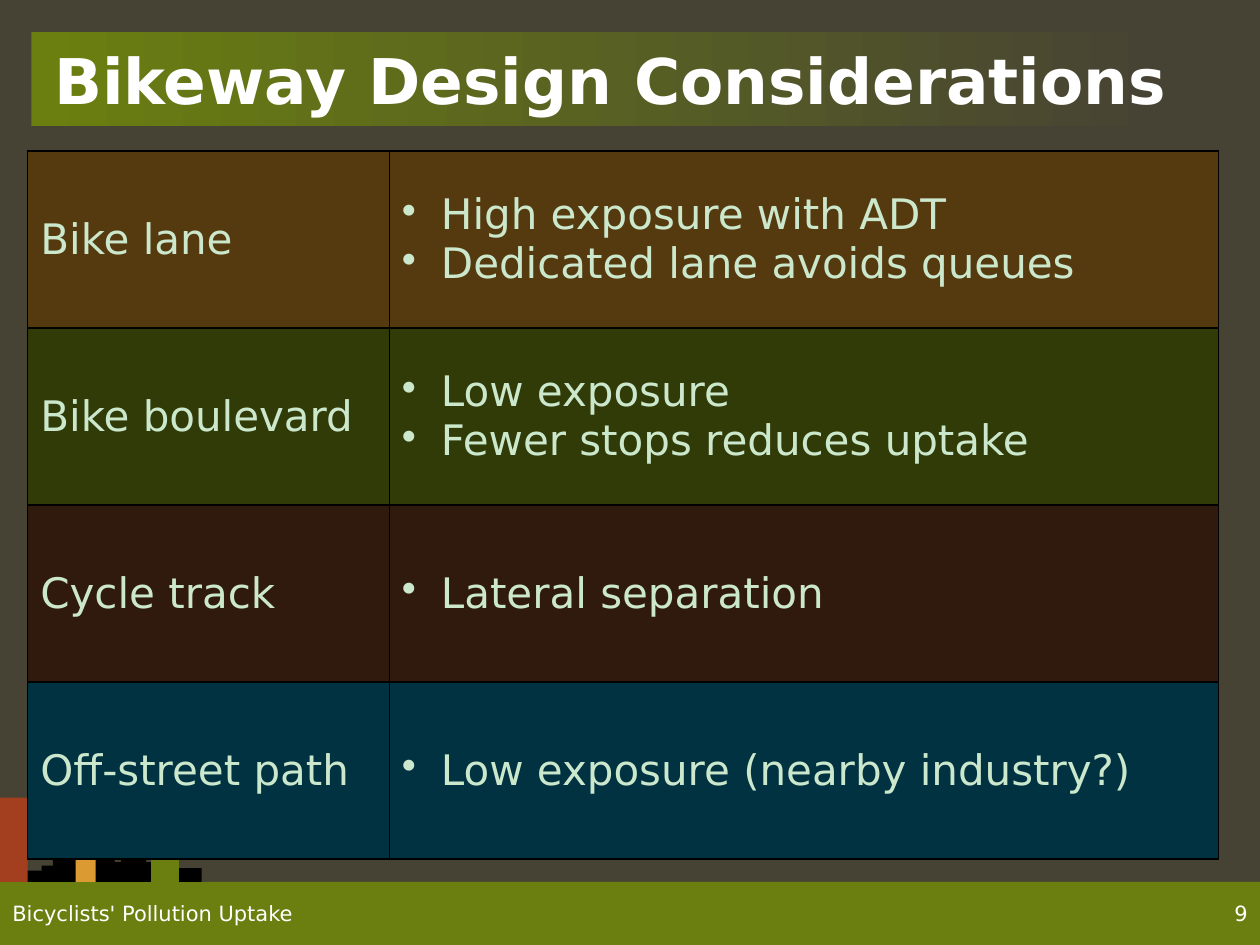
import pptx
import pptx.util
import pptx.dml.color
import pptx.enum.shapes
import pptx.enum.text
import pptx.oxml
import pptx.oxml.ns

Inches = pptx.util.Inches
ALIGN = pptx.enum.text.PP_ALIGN
MIDDLE = pptx.enum.text.MSO_ANCHOR.MIDDLE
FONT = "DejaVu Sans"
OLIVE, STONE, GOLD, RUST = "6A7F10", "474334", "DC9B32", "A33F1F"
BLACK, WHITE, MINT = "000000", "FFFFFF", "CCE8CC"

ROWS = [
    ("Bike lane", ["High exposure with ADT", "Dedicated lane avoids queues"], "553A0F"),
    ("Bike boulevard", ["Low exposure", "Fewer stops reduces uptake"], "313B07"),
    ("Cycle track", ["Lateral separation"], "301A0E"),
    ("Off-street path", ["Low exposure (nearby industry?)"], "003242"),
]
TOWERS = [
    (0.42, 0.27, 0.24, BLACK), (0.2, 0.27, 0.09, BLACK), (0.33, 0.27, 0.13, BLACK),
    (0.64, 0.27, 0.27, BLACK), (0.56, 0.27, 0.15, BLACK), (0.8, 0.07, 0.28, BLACK),
    (0.84, 0.42, 0.16, BLACK), (0.96, 0.2, 0.18, BLACK), (1.4, 0.2, 0.11, BLACK),
    (0, 0.22, 0.67, RUST), (0.6, 0.16, 0.4, GOLD),
    (1.2, 0.22, 0.32, OLIVE), (1.24, 0.13, 0.36, OLIVE),
]


def paint(fill, tone):
    fill.solid()
    fill.fore_color.rgb = pptx.dml.color.RGBColor.from_string(tone)


def write(frame, text, size=24, tone=MINT, bold=False, align=ALIGN.LEFT, bullet=False):
    frame.word_wrap = True
    frame.vertical_anchor = MIDDLE
    lines = [text] if isinstance(text, str) else text
    for pos, line in enumerate(lines):
        para = frame.add_paragraph() if pos else frame.paragraphs[0]
        para.alignment = align
        if bullet:
            props = para._p.get_or_add_pPr()
            props.set("marL", str(Inches(0.31)))
            props.set("indent", str(Inches(-0.31)))
            mark = pptx.oxml.ns.qn("a:buChar")
            props.append(props.makeelement(mark, {"char": "•"}))
        run = para.add_run()
        run.text = line
        run.font.name = FONT
        run.font.size = pptx.util.Pt(size)
        run.font.bold = bold
        paint(run.font.fill, tone)


def block(shapes, left, top, width, height, tone):
    kind = pptx.enum.shapes.MSO_SHAPE.RECTANGLE
    shape = shapes.add_shape(kind, Inches(left), Inches(top), Inches(width), Inches(height))
    shape.shadow.inherit = False
    shape.line.fill.background()
    paint(shape.fill, tone)
    return shape


def header(slide, left, top, width, height):
    band = block(slide.shapes, left, top, width, height, OLIVE)
    band.fill.gradient()
    band.fill.gradient_angle = 0
    for stop, tone, place in zip(band.fill.gradient_stops, (OLIVE, STONE), (0, 1)):
        stop.color.rgb = pptx.dml.color.RGBColor.from_string(tone)
        stop.position = place
    title = slide.shapes.title
    title.left, title.top = Inches(left + 0.08), Inches(top - 0.08)
    title.width, title.height = Inches(width + 0.33), Inches(height + 0.17)
    write(title.text_frame, "Bikeway Design Considerations", size=36, tone=WHITE, bold=True)


def skyline(slide, left, base):
    group = slide.shapes.add_group_shape()
    for start, width, height, tone in TOWERS:
        block(group.shapes, left + start, base - height, width, height, tone)


def border(cell):
    props = cell._tc.get_or_add_tcPr()
    for side in ("lnL", "lnR", "lnT", "lnB"):
        props.append(pptx.oxml.parse_xml(
            f'<a:{side} {pptx.oxml.ns.nsdecls("a")} w="12700"><a:solidFill>'
            f'<a:srgbClr val="{BLACK}"/></a:solidFill></a:{side}>'))


def matrix(slide, left, top, width, height):
    frame = slide.shapes.add_table(
        len(ROWS), 2, Inches(left), Inches(top), Inches(width), Inches(height))
    table = frame.table
    table.first_row = table.horz_banding = False
    table.columns[0].width = Inches(2.87)
    table.columns[1].width = Inches(width - 2.87)
    for pos, (name, notes, tone) in enumerate(ROWS):
        for col, text in enumerate((name, notes)):
            cell = table.cell(pos, col)
            border(cell)
            paint(cell.fill, tone)
            cell.vertical_anchor = MIDDLE
            write(cell.text_frame, text, bullet=col == 1)


def label(slide, left, top, width, height, text, **style):
    box = slide.shapes.add_textbox(Inches(left), Inches(top), Inches(width), Inches(height))
    write(box.text_frame, text, size=12, tone=WHITE, **style)


def footer(slide, left, top, width, height):
    label(slide, left + width - 0.67, top, 0.67, height, "9", align=ALIGN.RIGHT)
    label(slide, left, top, 4.17, height, "Bicyclists' Pollution Uptake")


def main():
    deck = pptx.Presentation()
    deck.slide_width, deck.slide_height = Inches(10), Inches(7.5)
    slide = deck.slides.add_slide(deck.slide_layouts[5])
    paint(slide.background.fill, STONE)
    block(slide.shapes, 0, 7, 10, 0.5, OLIVE)
    header(slide, 0.25, 0.25, 9, 0.75)
    title = slide.shapes.title._element
    skyline(slide, 0, 7)
    slide.shapes._spTree.append(title)
    matrix(slide, 0.22, 1.2, 9.45, 5.62)
    footer(slide, 0, 7, 10, 0.5)
    deck.save("out.pptx")


if __name__ == "__main__":
    main()
